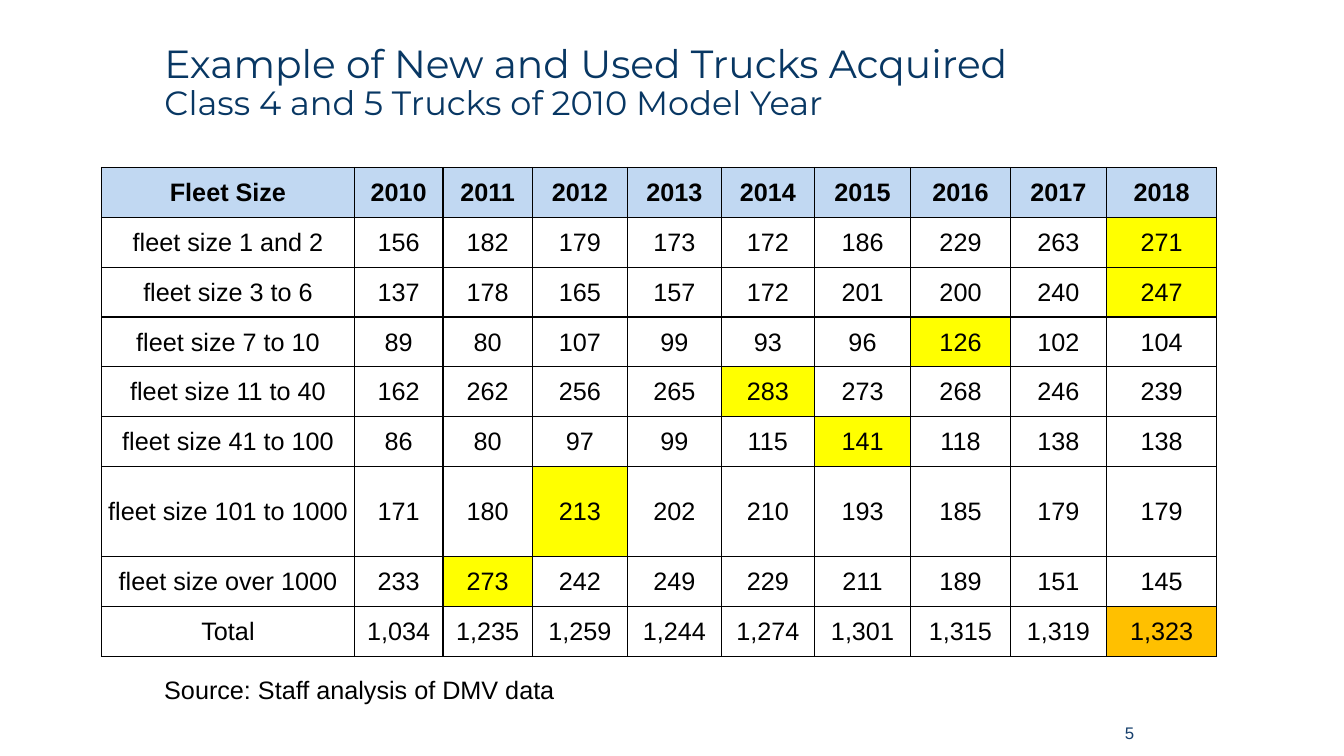
from lxml.etree import SubElement
from pptx import Presentation
from pptx.dml.color import RGBColor
from pptx.enum.text import MSO_ANCHOR, MSO_AUTO_SIZE, PP_ALIGN
from pptx.oxml.ns import qn
from pptx.util import Pt

YEARS = range(2010, 2019)
FLEETS = {
    "fleet size 1 and 2": [156, 182, 179, 173, 172, 186, 229, 263, 271],
    "fleet size 3 to 6": [137, 178, 165, 157, 172, 201, 200, 240, 247],
    "fleet size 7 to 10": [89, 80, 107, 99, 93, 96, 126, 102, 104],
    "fleet size 11 to 40": [162, 262, 256, 265, 283, 273, 268, 246, 239],
    "fleet size 41 to 100": [86, 80, 97, 99, 115, 141, 118, 138, 138],
    "fleet size 101 to 1000": [171, 180, 213, 202, 210, 193, 185, 179, 179],
    "fleet size over 1000": [233, 273, 242, 249, 229, 211, 189, 151, 145],
}
WIDTHS = [180.7, 63.2, 63.9, 67.9, 67.1, 66.4, 68.9, 71.1, 68.9, 78.6]
HEIGHT, TALL = 35.6, 64.6
TALL_ROW = 6
BLUE, YELLOW, ORANGE = "C1D8F2", "FFFF00", "FFC000"


def paint(target, color):
    """Give a font or a fill a solid colour."""
    if hasattr(target, "solid"):
        target.solid()
        target.fore_color.rgb = RGBColor.from_string(color)
    else:
        target.color.rgb = RGBColor.from_string(color)


def style(para, size, color, name="Arial", bold=False):
    font = para.font
    font.size, font.name, font.bold = Pt(size), name, bold
    paint(font, color)


def place(shape, left, top, width, height):
    shape.left, shape.top = Pt(left), Pt(top)
    shape.width, shape.height = Pt(width), Pt(height)


def add_title(slide, lines):
    title = slide.shapes.title
    place(title, 110.2, 18.7, 784, 82)
    frame = title.text_frame
    frame.auto_size = MSO_AUTO_SIZE.NONE
    frame.vertical_anchor = MSO_ANCHOR.MIDDLE
    para = frame.paragraphs[0]
    para.alignment = PP_ALIGN.LEFT
    para.line_spacing = 0.9
    for index, (text, size) in enumerate(lines):
        if index:
            para.add_line_break()
        run = para.add_run()
        run.text = text
        run.font.size = Pt(size)
    style(para, lines[0][1], "083763", "Montserrat")


def add_text(slide, text, box, size, color, align, anchor):
    frame = slide.shapes.add_textbox(*map(Pt, box)).text_frame
    frame.word_wrap = True
    frame.vertical_anchor = anchor
    para = frame.paragraphs[0]
    para.text = text
    para.alignment = align
    style(para, size, color)


def add_edges(cell):
    props = cell._tc.get_or_add_tcPr()
    for side in "LRTB":
        line = SubElement(props, qn(f"a:ln{side}"), w=str(Pt(1)))
        fill = SubElement(line, qn("a:solidFill"))
        SubElement(fill, qn("a:srgbClr"), val="000000")


def fill_cell(cell, text, color=None, bold=False, after=0):
    cell.margin_left = cell.margin_right = cell.margin_top = Pt(0.7)
    cell.margin_bottom = Pt(0)
    cell.vertical_anchor = MSO_ANCHOR.MIDDLE
    add_edges(cell)
    if color:
        paint(cell.fill, color)
    else:
        cell.fill.background()
    para = cell.text_frame.paragraphs[0]
    para.text = text
    para.alignment = PP_ALIGN.CENTER
    para.space_after = Pt(after)
    style(para, 18, "000000", bold=bold)


def add_grid(slide):
    totals = [sum(column) for column in zip(*FLEETS.values())]
    rows = [*FLEETS.items(), ("Total", totals)]
    heights = [HEIGHT] * (len(rows) + 1)
    heights[TALL_ROW] = TALL
    table = slide.shapes.add_table(
        len(heights), len(WIDTHS), Pt(72.5), Pt(119.7),
        Pt(sum(WIDTHS)), Pt(sum(heights))).table
    for column, width in zip(table.columns, WIDTHS):
        column.width = Pt(width)
    for row, height in zip(table.rows, heights):
        row.height = Pt(height)
    for col, text in enumerate(["Fleet Size", *YEARS]):
        fill_cell(table.cell(0, col), str(text), BLUE, bold=True)
    for row, (label, counts) in enumerate(rows, 1):
        fill_cell(table.cell(row, 0), label)
        peak = ORANGE if label == "Total" else YELLOW
        for col, count in enumerate(counts, 1):
            color = peak if count == max(counts) else None
            fill_cell(table.cell(row, col), f"{count:,}", color, after=6)


def main():
    deck = Presentation()
    deck.slide_width, deck.slide_height = Pt(960), Pt(540)
    slide = deck.slides.add_slide(deck.slide_layouts[5])
    add_title(slide, [("Example of New and Used Trucks Acquired", 28),
                      ("Class 4 and 5 Trucks of 2010 Model Year", 24)])
    add_grid(slide)
    add_text(slide, "Source: Staff analysis of DMV data", (110.2, 478, 553, 29),
             18, "000000", PP_ALIGN.LEFT, MSO_ANCHOR.TOP)
    add_text(slide, "5", (678.2, 509, 139, 29),
             12, "17406D", PP_ALIGN.RIGHT, MSO_ANCHOR.MIDDLE)
    deck.save("out.pptx")


if __name__ == "__main__":
    main()
